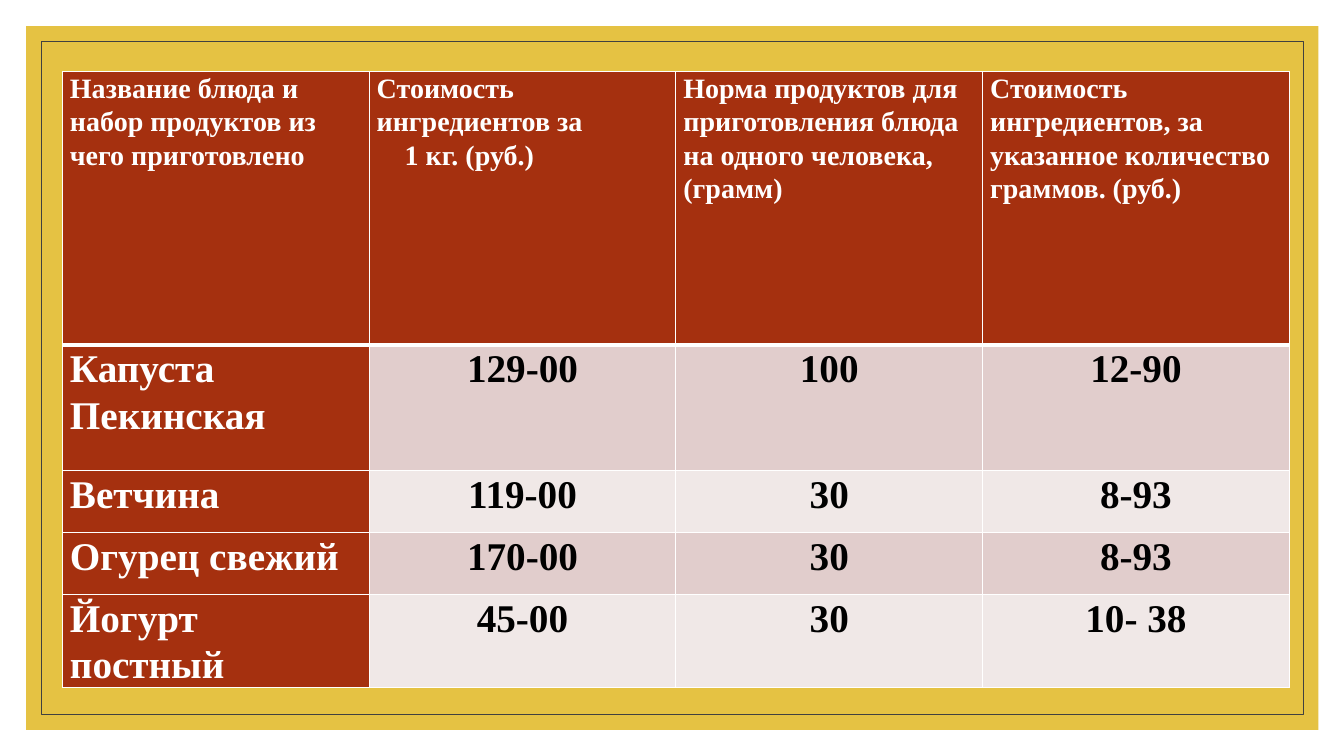
"""Build a slide with a table of dish ingredients and their costs."""
from lxml.etree import SubElement
from pptx import Presentation
from pptx.dml.color import RGBColor
from pptx.enum.shapes import MSO_SHAPE
from pptx.enum.text import PP_ALIGN
from pptx.oxml.ns import qn
from pptx.util import Pt

GOLD = RGBColor(0xE5, 0xC2, 0x43)
DARK_GREY = RGBColor(0x40, 0x40, 0x40)
RUST = RGBColor(0xA5, 0x30, 0x0F)
ROSE = RGBColor(0xE1, 0xCD, 0xCC)
PALE_ROSE = RGBColor(0xF0, 0xE8, 0xE7)
WHITE = RGBColor(0xFF, 0xFF, 0xFF)
BLACK = RGBColor(0x00, 0x00, 0x00)

FONT = "Times New Roman"
COLUMN_WIDTH = 219.1
ROW_HEIGHTS = [195.2, 90, 44.2, 44.2, 66]
UNIT_INDENT = 20
ROWS = [
    ["Название блюда и набор продуктов из чего приготовлено",
     "Стоимость ингредиентов за\n1 кг. (руб.)",
     "Норма продуктов для приготовления блюда на одного человека, (грамм)",
     "Стоимость ингредиентов, за указанное количество граммов. (руб.)"],
    ["Капуста Пекинская", "129-00", "100", "12-90"],
    ["Ветчина", "119-00", "30", "8-93"],
    ["Огурец свежий", "170-00", "30", "8-93"],
    ["Йогурт постный", "45-00", "30", "10- 38"],
]


def add_frame(slide, inset, width, height, fill=None, line=None):
    """Add a rectangle with an optional fill and outline."""
    shape = slide.shapes.add_shape(
        MSO_SHAPE.RECTANGLE, Pt(inset), Pt(inset), Pt(width), Pt(height))
    shape.shadow.inherit = False
    if fill is None:
        shape.fill.background()
    else:
        shape.fill.solid()
        shape.fill.fore_color.rgb = fill
    if line is None:
        shape.line.fill.background()
    else:
        shape.line.color.rgb = line
        shape.line.width = Pt(0.5)


def add_borders(cell, top, bottom):
    """Draw white borders around a cell."""
    properties = cell._tc.get_or_add_tcPr()
    for side, width in (("L", 1), ("R", 1), ("T", top), ("B", bottom)):
        line = SubElement(properties, qn(f"a:ln{side}"), w=str(Pt(width)))
        fill = SubElement(line, qn("a:solidFill"))
        SubElement(fill, qn("a:srgbClr"), val=str(WHITE))


def fill_cell(cell, text, row, column):
    """Write and format one table cell according to its position."""
    is_header = row == 0
    is_value = row > 0 and column > 0
    add_borders(cell, 3 if row == 1 else 1, 3 if is_header else 1)
    cell.fill.solid()
    band = ROSE if row % 2 else PALE_ROSE
    cell.fill.fore_color.rgb = band if is_value else RUST
    cell.margin_left = cell.margin_right = Pt(5.4)
    cell.margin_top = cell.margin_bottom = Pt(0)
    cell.text_frame.text = text
    for index, paragraph in enumerate(cell.text_frame.paragraphs):
        paragraph.alignment = PP_ALIGN.CENTER if is_value else PP_ALIGN.LEFT
        paragraph.line_spacing = 1.07
        if index:
            paragraph._p.get_or_add_pPr().set("marL", str(Pt(UNIT_INDENT)))
        for run in paragraph.runs:
            run.font.name = FONT
            run.font.size = Pt(20 if is_header else 28)
            run.font.bold = True
            run.font.color.rgb = BLACK if is_value else WHITE


def add_cost_table(slide):
    """Add the table of ingredients, norms and costs."""
    columns = len(ROWS[0])
    table = slide.shapes.add_table(
        len(ROWS), columns, Pt(44.6), Pt(51.1),
        Pt(COLUMN_WIDTH * columns), Pt(sum(ROW_HEIGHTS))).table
    table.horz_banding = False
    for column in table.columns:
        column.width = Pt(COLUMN_WIDTH)
    for row, texts in enumerate(ROWS):
        table.rows[row].height = Pt(ROW_HEIGHTS[row])
        for column, text in enumerate(texts):
            fill_cell(table.cell(row, column), text, row, column)


def main():
    """Create the presentation and save it."""
    presentation = Presentation()
    presentation.slide_width = Pt(960)
    presentation.slide_height = Pt(540)
    slide = presentation.slides.add_slide(presentation.slide_layouts[6])
    add_frame(slide, 18.7, 923, 502.6, fill=GOLD)
    add_frame(slide, 29.5, 901.4, 481, line=DARK_GREY)
    add_cost_table(slide)
    presentation.save("out.pptx")


if __name__ == "__main__":
    main()
